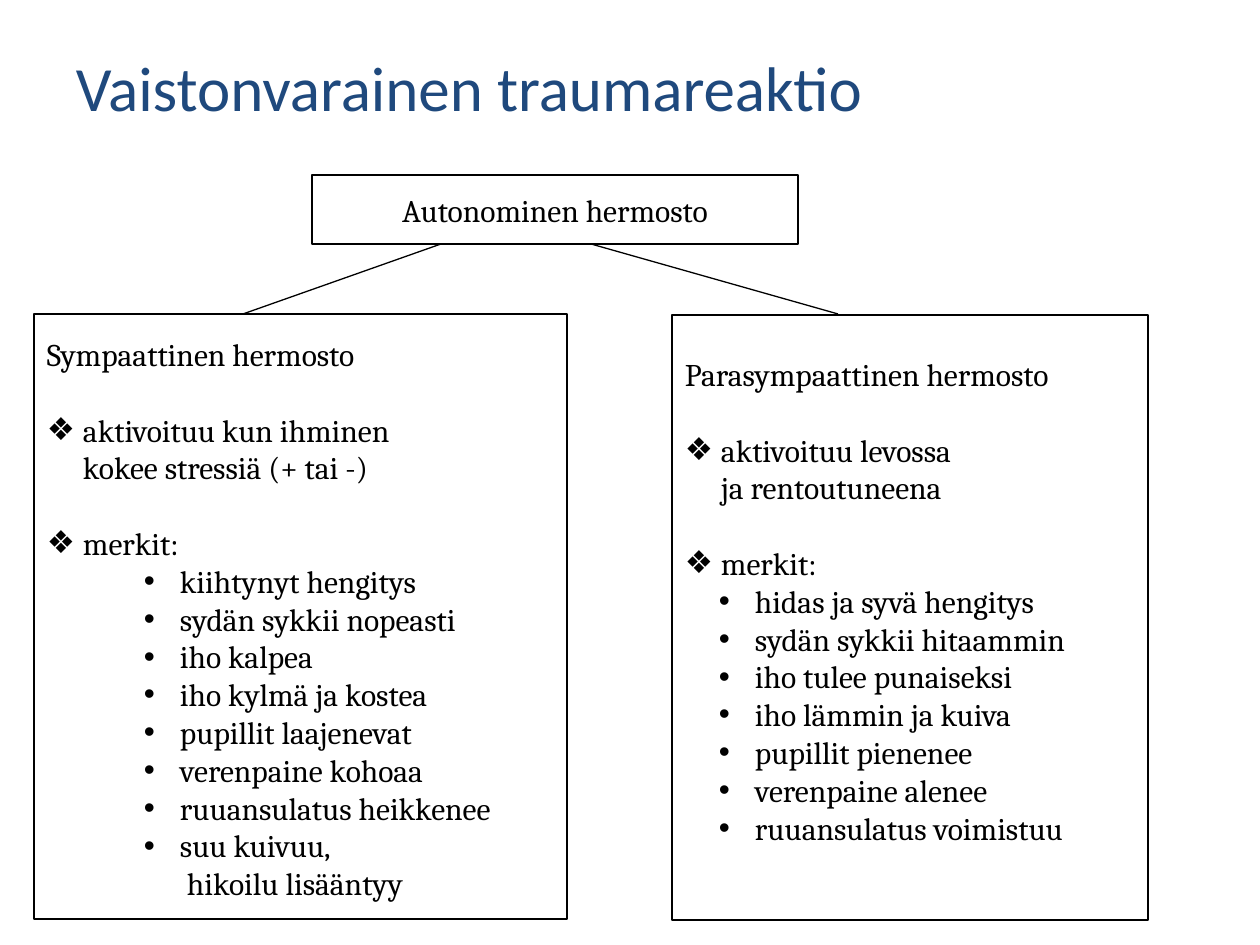
from dataclasses import dataclass

from lxml.etree import SubElement
from pptx import Presentation
from pptx.dml.color import RGBColor
from pptx.enum.shapes import MSO_CONNECTOR, MSO_SHAPE
from pptx.enum.text import MSO_ANCHOR as Anchor, PP_ALIGN as Align
from pptx.oxml.ns import qn
from pptx.util import Emu, Pt

PX = 914400 / 126
NAVY = RGBColor(0x1F, 0x49, 0x7D)
BLACK = RGBColor(0, 0, 0)
HANGING = 36
PADDING = 13
BLANK_LINE = Pt(21.6)


@dataclass(frozen=True)
class Box:
    left: int
    top: int
    width: int
    height: int


@dataclass(frozen=True)
class Branch:
    box: Box
    inset_top: int
    sign_margin: int
    heading: str
    trigger: str
    signs: tuple[str, ...]


@dataclass(frozen=True)
class Link:
    start: tuple[int, int]
    end: tuple[int, int]


ROOT = Box(312, 175, 486, 69)
BRANCHES = (
    Branch(Box(672, 315, 476, 605), 40, 70, "Parasympaattinen hermosto",
           "aktivoituu levossa\vja rentoutuneena",
           ("hidas ja syvä hengitys", "sydän sykkii hitaammin",
            "iho tulee punaiseksi", "iho lämmin ja kuiva",
            "pupillit pienenee", "verenpaine alenee",
            "ruuansulatus voimistuu")),
    Branch(Box(34, 314, 533, 605), 21, 133, "Sympaattinen hermosto",
           "aktivoituu kun ihminen\vkokee stressiä (+ tai -)",
           ("kiihtynyt hengitys", "sydän sykkii nopeasti", "iho kalpea",
            "iho kylmä ja kostea", "pupillit laajenevat",
            "verenpaine kohoaa", "ruuansulatus heikkenee",
            "suu kuivuu,\v hikoilu lisääntyy")),
)
LINKS = (Link((441, 244), (243, 314)), Link((591, 244), (838, 314)))


def px(length: int) -> Emu:
    return Emu(round(length * PX))


def frame(box: Box) -> tuple[Emu, ...]:
    return px(box.left), px(box.top), px(box.width), px(box.height)


def style(paragraph, font_name: str, size: int, color: RGBColor) -> None:
    for run in paragraph.runs:
        run.font.name = font_name
        run.font.size = Pt(size)
        run.font.color.rgb = color


def add_bullet(paragraph, mark: str, margin: int) -> None:
    """Give the paragraph a bullet that hangs left of its margin."""
    properties = paragraph._p.get_or_add_pPr()
    properties.set("marL", str(px(margin)))
    properties.set("indent", str(-px(HANGING)))
    SubElement(properties, qn("a:buFont"), typeface="Arial")
    SubElement(properties, qn("a:buChar"), char=mark)


def add_title(slide, box: Box, title: str) -> None:
    text_frame = slide.shapes.add_textbox(*frame(box)).text_frame
    text_frame.word_wrap = True
    text_frame.margin_left = px(PADDING)
    text_frame.margin_top = px(10)
    text_frame.text = title
    style(text_frame.paragraphs[0], "Calibri", 36, NAVY)


def add_outlined_box(slide, box: Box):
    outline = slide.shapes.add_shape(MSO_SHAPE.RECTANGLE, *frame(box))
    outline.shadow.inherit = False
    outline.fill.background()
    outline.line.color.rgb = BLACK
    outline.line.width = Pt(0.75)
    text_frame = outline.text_frame
    text_frame.word_wrap = True
    text_frame.margin_left = text_frame.margin_right = px(PADDING)
    return text_frame


def add_root(slide, box: Box, label: str) -> None:
    text_frame = add_outlined_box(slide, box)
    text_frame.vertical_anchor = Anchor.MIDDLE
    text_frame.text = label
    text_frame.paragraphs[0].alignment = Align.CENTER
    style(text_frame.paragraphs[0], "Cambria", 18, BLACK)


def add_branch(slide, branch: Branch) -> None:
    text_frame = add_outlined_box(slide, branch.box)
    text_frame.vertical_anchor = Anchor.TOP
    text_frame.margin_top = px(branch.inset_top)
    points = (branch.trigger, "merkit:")
    text_frame.text = "\n".join((branch.heading, *points, *branch.signs))
    for index, paragraph in enumerate(text_frame.paragraphs):
        paragraph.alignment = Align.LEFT
        style(paragraph, "Cambria", 18, BLACK)
        if index > len(points):
            paragraph.level = 1
            add_bullet(paragraph, "•", branch.sign_margin)
        elif index > 0:
            paragraph.space_before = BLANK_LINE
            add_bullet(paragraph, "❖", HANGING)


def add_link(slide, link: Link) -> None:
    ends = map(px, (*link.start, *link.end))
    connector = slide.shapes.add_connector(MSO_CONNECTOR.STRAIGHT, *ends)
    connector.line.color.rgb = BLACK
    connector.line.width = Pt(0.75)
    SubElement(connector._element.spPr, qn("a:effectLst"))


def main() -> None:
    presentation = Presentation()
    presentation.slide_width = px(1260)
    presentation.slide_height = px(945)
    slide = presentation.slides.add_slide(presentation.slide_layouts[6])
    add_title(slide, Box(63, 38, 1134, 117), "Vaistonvarainen traumareaktio")
    add_root(slide, ROOT, "Autonominen hermosto")
    for branch in BRANCHES:
        add_branch(slide, branch)
    for link in LINKS:
        add_link(slide, link)
    presentation.save("out.pptx")


if __name__ == "__main__":
    main()
